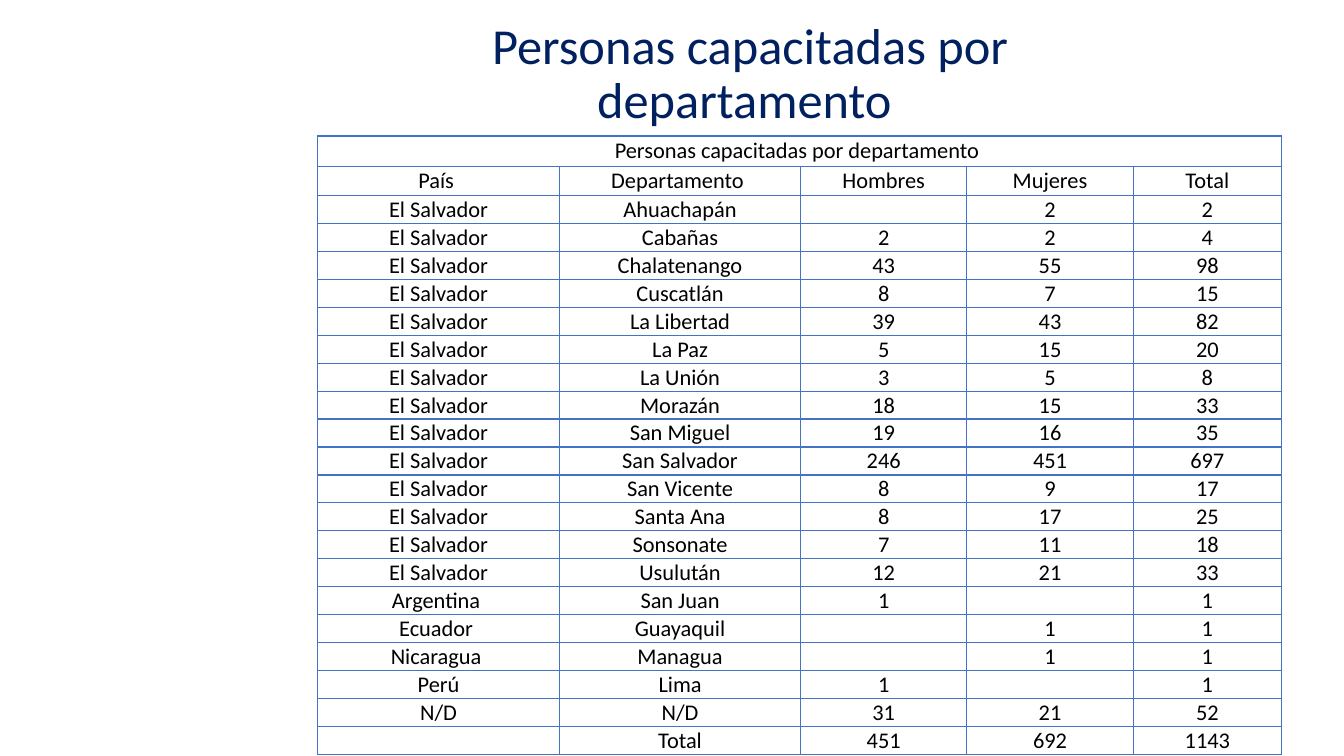
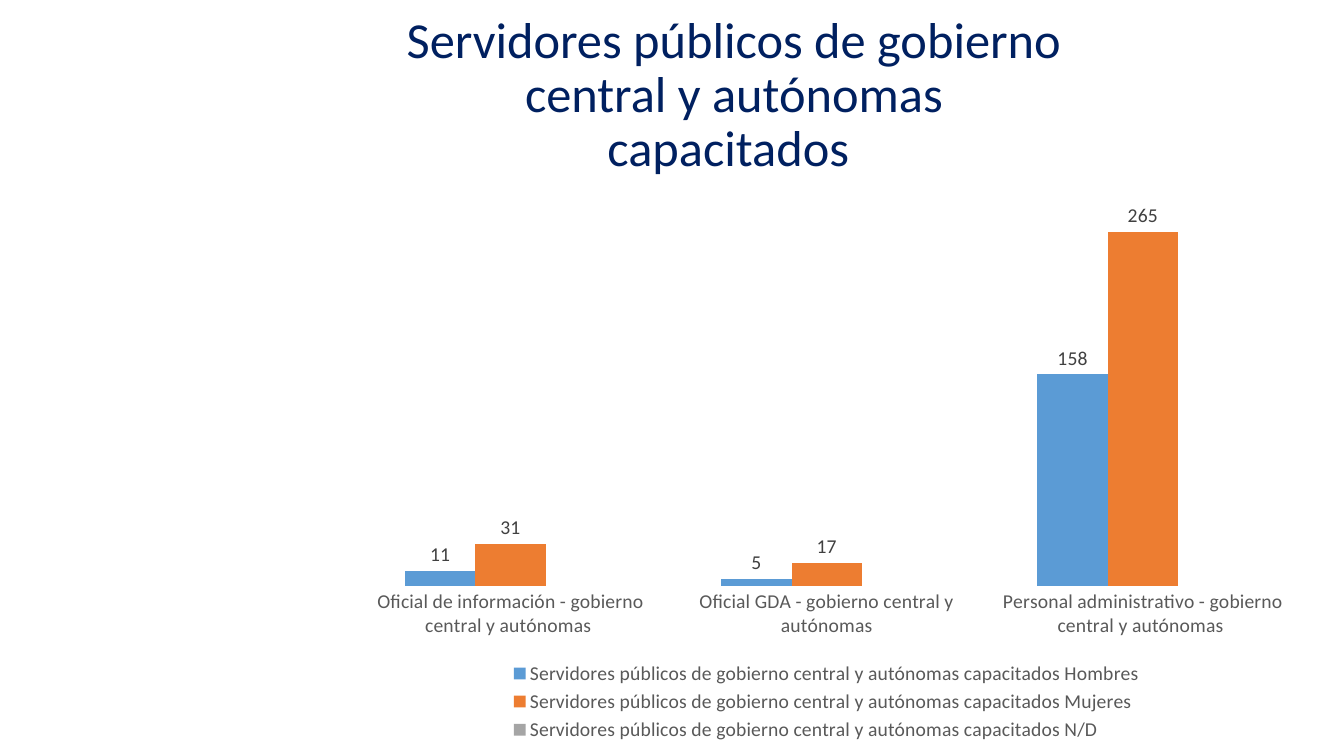
"""Build two slides on trained people: a table by department and a chart of public servants."""
from lxml import etree
from pptx import Presentation
from pptx import util as u
from pptx.chart.data import CategoryChartData
from pptx.dml.color import RGBColor
from pptx.enum import chart as ch, text
from pptx.oxml import ns

COLORS = {"title": "002060", "text": "000000", "border": "4472C4", "axis": "595959",
          "label": "404040", "men": "5B9BD5", "women": "ED7D31", "unknown": "A5A5A5"}

SALVADOR = [("Ahuachapán", "", 2, 2), ("Cabañas", 2, 2, 4), ("Chalatenango", 43, 55, 98),
            ("Cuscatlán", 8, 7, 15), ("La Libertad", 39, 43, 82), ("La Paz", 5, 15, 20),
            ("La Unión", 3, 5, 8), ("Morazán", 18, 15, 33), ("San Miguel", 19, 16, 35),
            ("San Salvador", 246, 451, 697), ("San Vicente", 8, 9, 17),
            ("Santa Ana", 8, 17, 25), ("Sonsonate", 7, 11, 18), ("Usulután", 12, 21, 33)]
ROWS = [("Personas capacitadas por departamento ", "", "", "", ""),
        ("País ", "Departamento ", "Hombres", "Mujeres", "Total"),
        *(("El Salvador", *row) for row in SALVADOR),
        ("Argentina ", "San Juan", 1, "", 1),
        ("Ecuador ", "Guayaquil", "", 1, 1),
        ("Nicaragua ", "Managua", "", 1, 1),
        ("Perú", "Lima", 1, "", 1),
        ("N/D", "N/D", 31, 21, 52),
        ("", "Total", 451, 692, 1143)]

CATEGORIES = ["Oficial de información - gobierno central y autónomas ",
              "Oficial GDA - gobierno central y autónomas",
              "Personal administrativo - gobierno central y autónomas "]
TOPIC = "Servidores públicos de gobierno central y autónomas capacitados "
SERIES = [("Hombres", (11, 5, 158), "men"), ("Mujeres", (31, 17, 265), "women"),
          ("N/D", (None, None, None), "unknown")]


class Deck:
    font_name = "Calibri"

    def __init__(self):
        self.prs = Presentation()
        self.prs.slide_width, self.prs.slide_height = u.Inches(13.33), u.Inches(7.5)
        self.s = None

    def style(self, font, size, color):
        font.name, font.size, font.bold = self.font_name, u.Pt(size), False
        font.color.rgb = RGBColor.from_string(COLORS[color])

    def add_slide(self):
        self.s = self.prs.slides.add_slide(self.prs.slide_layouts[5])

    def title(self, words, box, bottom=0.05):
        sp = self.s.shapes.title
        sp.left, sp.top, sp.width, sp.height = map(u.Inches, box)
        tf = sp.text_frame
        tf.word_wrap, tf.auto_size = True, text.MSO_AUTO_SIZE.NONE
        tf.vertical_anchor = text.MSO_ANCHOR.MIDDLE
        tf.margin_bottom = u.Inches(bottom)
        p = tf.paragraphs[0]
        p.alignment, p.line_spacing = text.PP_ALIGN.CENTER, 0.9
        r = p.add_run()
        r.text = words
        self.style(r.font, 36, "title")

    def borders(self, cell):
        tc_pr = cell._tc.get_or_add_tcPr()
        for side in ("lnL", "lnR", "lnT", "lnB"):
            ln = etree.SubElement(tc_pr, ns.qn(f"a:{side}"), w=str(u.Pt(1)))
            fill = etree.SubElement(ln, ns.qn("a:solidFill"))
            etree.SubElement(fill, ns.qn("a:srgbClr"), val=COLORS["border"])

    def cell(self, cell, value, anchor):
        cell.margin_left = cell.margin_right = u.Inches(0.01)
        cell.margin_top = cell.margin_bottom = 0
        cell.vertical_anchor = anchor
        self.borders(cell)
        cell.fill.background()
        p = cell.text_frame.paragraphs[0]
        p.alignment = text.PP_ALIGN.CENTER
        if value == "":
            etree.SubElement(p._p, ns.qn("a:endParaRPr"), sz="1600")
            return
        r = p.add_run()
        r.text = str(value)
        self.style(r.font, 16, "text")

    def table(self, rows, box, widths, heads):
        frame = self.s.shapes.add_table(len(rows), len(widths), *map(u.Inches, box))
        tbl = frame.table
        tbl.first_row = tbl.horz_banding = False
        for col, width in zip(tbl.columns, widths):
            col.width = u.Inches(width)
        body = (box[3] - sum(heads)) / (len(rows) - len(heads))
        for i, values in enumerate(rows):
            is_head = i < len(heads)
            tbl.rows[i].height = u.Inches(heads[i] if is_head else body)
            anchor = text.MSO_ANCHOR.MIDDLE if is_head else text.MSO_ANCHOR.BOTTOM
            for j, value in enumerate(values):
                self.cell(tbl.cell(i, j), value, anchor)
        tbl.cell(0, 0).merge(tbl.cell(0, len(widths) - 1))

    def plot_layout(self, chart, **edges):
        area = chart._chartSpace.chart.plotArea
        for old in area.findall(ns.qn("c:layout")):
            area.remove(old)
        layout = etree.Element(ns.qn("c:layout"))
        area.insert(0, layout)
        manual = etree.SubElement(layout, ns.qn("c:manualLayout"))
        settings = {"layoutTarget": "inner", "xMode": "edge", "yMode": "edge", **edges}
        for tag, val in settings.items():
            etree.SubElement(manual, ns.qn(f"c:{tag}"), val=str(val))

    def column_chart(self, categories, series, box):
        data = CategoryChartData()
        data.categories = categories
        for name, values, _ in series:
            data.add_series(TOPIC + name, values)
        chart = self.s.shapes.add_chart(
            ch.XL_CHART_TYPE.COLUMN_CLUSTERED, *map(u.Inches, box), data).chart
        chart.has_title = False
        self.style(chart.font, 14, "text")
        plot = chart.plots[0]
        plot.gap_width, plot.overlap, plot.vary_by_categories = 150, 0, False
        for ser, (_, values, color) in zip(plot.series, series):
            ser.format.fill.solid()
            ser.format.fill.fore_color.rgb = RGBColor.from_string(COLORS[color])
            ser.invert_if_negative = False
            if any(values):
                labels = ser.data_labels
                labels.show_value = True
                labels.position = ch.XL_LABEL_POSITION.OUTSIDE_END
                self.style(labels.font, 14, "label")
        axis = chart.category_axis
        axis.major_tick_mark = ch.XL_TICK_MARK.NONE
        axis.format.line.fill.background()
        self.style(axis.tick_labels.font, 14, "axis")
        scale = chart.value_axis
        scale.minimum_scale, scale.maximum_scale = 0, 300
        scale.has_major_gridlines = scale.visible = False
        chart.has_legend = True
        chart.legend.position = ch.XL_LEGEND_POSITION.BOTTOM
        chart.legend.include_in_layout = False
        self.style(chart.legend.font, 14, "axis")
        self.plot_layout(chart, x=0.02, y=0.02, w=0.96, h=0.7)


def main():
    deck = Deck()
    deck.add_slide()
    deck.title(ROWS[0][0], (4.07, 0.13, 6.74, 1.23))
    deck.table(ROWS, (3.15, 1.35, 9.57, 6.14), (2.4, 2.39, 1.65, 1.65, 1.47), (0.3, 0.29))
    deck.add_slide()
    deck.title(TOPIC, (3.91, 0.11, 6.74, 2.28), bottom=0.64)
    deck.column_chart(CATEGORIES, SERIES, (3.3, 1.72, 9.8, 5.68))
    deck.prs.save("out.pptx")


if __name__ == "__main__":
    main()
